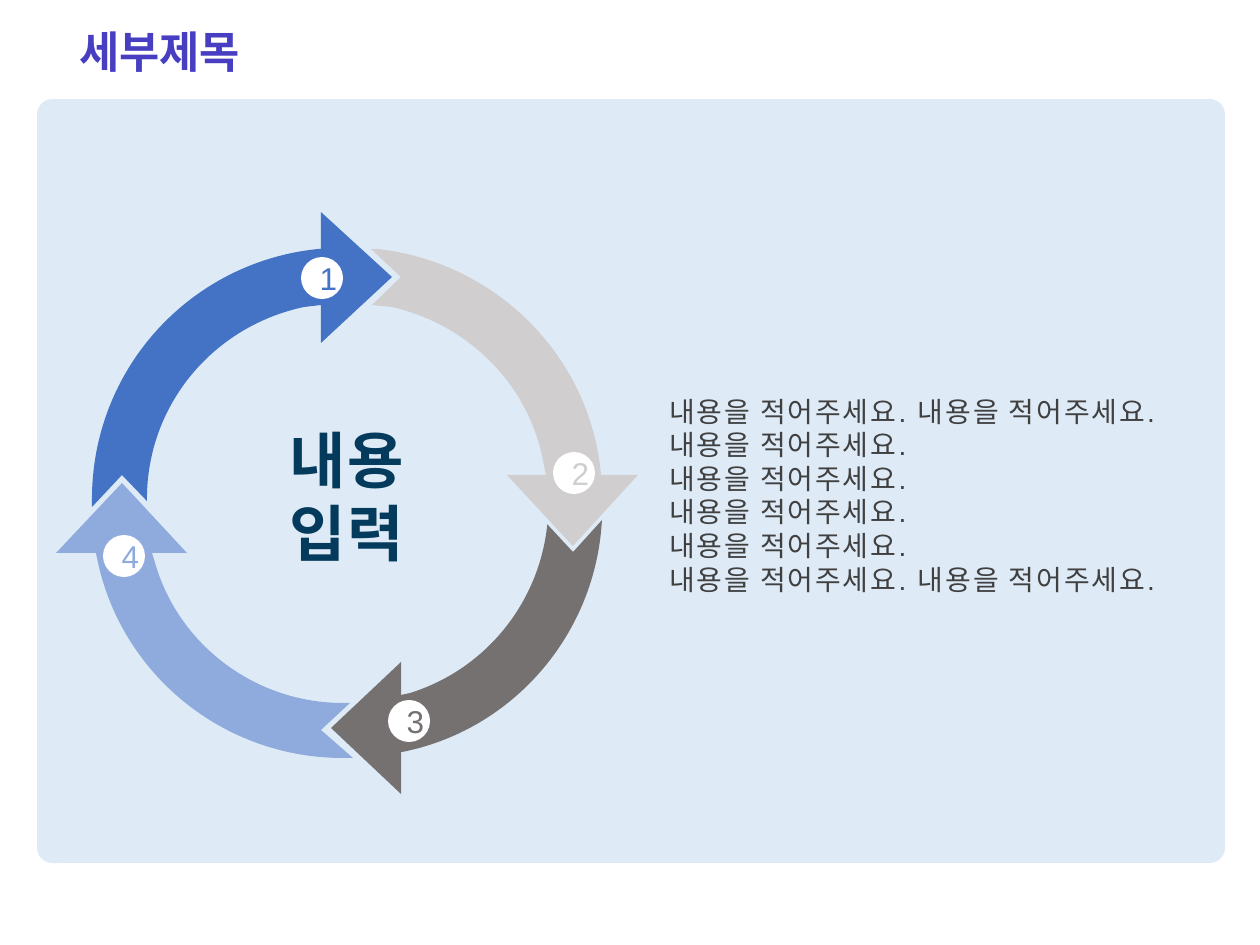
"""Build a slide with a four-step arrow cycle beside a short text."""
import copy

import pptx
import pptx.dml.color
import pptx.enum.shapes
import pptx.enum.text
import pptx.oxml.ns
import pptx.util

PX = 914400 / 126
SHAPES = pptx.enum.shapes.MSO_SHAPE
ALIGN = pptx.enum.text.PP_ALIGN
ANCHOR = pptx.enum.text.MSO_ANCHOR


def paint(shape, color):
    shape.shadow.inherit = False
    shape.fill.solid()
    shape.fill.fore_color.rgb = pptx.dml.color.RGBColor.from_string(color)
    shape.line.fill.background()


def write(box, text, size, color, font="Arial", bold=False, align=ALIGN.LEFT,
          anchor=ANCHOR.TOP, tracking=0, line_spacing=1.0):
    frame = box.text_frame
    frame.word_wrap = True
    frame.vertical_anchor = anchor
    for index, line in enumerate(text.split("\n")):
        para = frame.add_paragraph() if index else frame.paragraphs[0]
        para.alignment = align
        para.line_spacing = line_spacing
        span = para.add_run()
        span.text = line
        span.font.name = font
        span.font.size = pptx.util.Pt(size)
        span.font.bold = bold
        span.font.color.rgb = pptx.dml.color.RGBColor.from_string(color)
        if tracking:
            span.font._element.set("spc", str(round(tracking * 100)))


deck = pptx.Presentation()
deck.slide_width = pptx.util.Inches(10)
deck.slide_height = pptx.util.Inches(7.5)
page = deck.slides.add_slide(deck.slide_layouts[6])

panel = page.shapes.add_shape(
    SHAPES.ROUNDED_RECTANGLE, *[round(v * PX) for v in (37, 99, 1188, 764)])
panel.adjustments[0] = 0.02
paint(panel, "DEEBF7")

steps = [
    ("1", "4472C4", (301, 257), [
        (321, 212), (392, 277), (321, 343), (321, 305), (304, 307),
        (214, 326, 147, 404, 147, 499), (147, 501), (122, 475), (92, 507),
        (92, 499), (92, 369, 190, 262, 318, 249), (321, 249)]),
    ("2", "D0CECE", (553, 452), [
        (371, 249), (378, 249), (495, 262, 590, 355, 601, 474), (601, 475),
        (638, 475), (573, 546), (507, 475), (546, 475), (543, 460),
        (528, 383, 467, 324, 392, 307), (372, 305), (401, 277)]),
    ("3", "767171", (388, 700), [
        (401, 662), (401, 695), (410, 693), (484, 670, 538, 605, 547, 527),
        (547, 524), (573, 552), (602, 520), (601, 532),
        (590, 641, 509, 731, 402, 752), (401, 752), (401, 794), (331, 728)]),
    ("4", "8FAADC", (103, 535), [
        (122, 483), (187, 553), (152, 553), (156, 566),
        (180, 645, 255, 703, 343, 703), (350, 703), (321, 730), (353, 758),
        (343, 758), (222, 758, 120, 673, 97, 558), (96, 553), (56, 553)]),
]
for number, color, corner, outline in steps:
    ends = [tuple(round(v * PX) for v in part[-2:]) for part in outline]
    builder = page.shapes.build_freeform(*ends[0])
    builder.add_line_segments(ends[1:], close=True)
    arrow = builder.convert_to_shape()
    paint(arrow, color)
    segments = list(arrow._element.iter(pptx.oxml.ns.qn("a:lnTo")))
    for segment, part in zip(segments, outline[1:]):
        if len(part) == 6:
            segment.tag = pptx.oxml.ns.qn("a:cubicBezTo")
            for place, start in enumerate((0, 2)):
                control = copy.deepcopy(segment[-1])
                control.set("x", str(round(part[start] * PX) - arrow.left))
                control.set("y", str(round(part[start + 1] * PX) - arrow.top))
                segment.insert(place, control)

for number, color, corner, outline in steps:
    badge = page.shapes.add_shape(
        SHAPES.OVAL, *[round(v * PX) for v in (*corner, 42, 42)])
    paint(badge, "FFFFFF")
    write(badge, number, 18, color, align=ALIGN.CENTER, anchor=ANCHOR.MIDDLE)

single = "내용을 적어주세요."
double = f"{single} {single}"
body = "\n".join([double, *[single] * 4, double])
texts = [
    ((67, 0, 1086, 108), "세부제목", dict(
        size=25, color="473EC1", font="Calibri", bold=True,
        anchor=ANCHOR.MIDDLE, line_spacing=0.9)),
    ((264, 416, 165, 161), "내용\n입력", dict(
        size=35, color="043A5C", bold=True, align=ALIGN.CENTER, tracking=1.1)),
    ((657, 388, 552, 217), body, dict(size=16, color="404040", tracking=1.1)),
]
for place, text, style in texts:
    box = page.shapes.add_textbox(*[round(v * PX) for v in place])
    write(box, text, **style)

deck.save("out.pptx")
